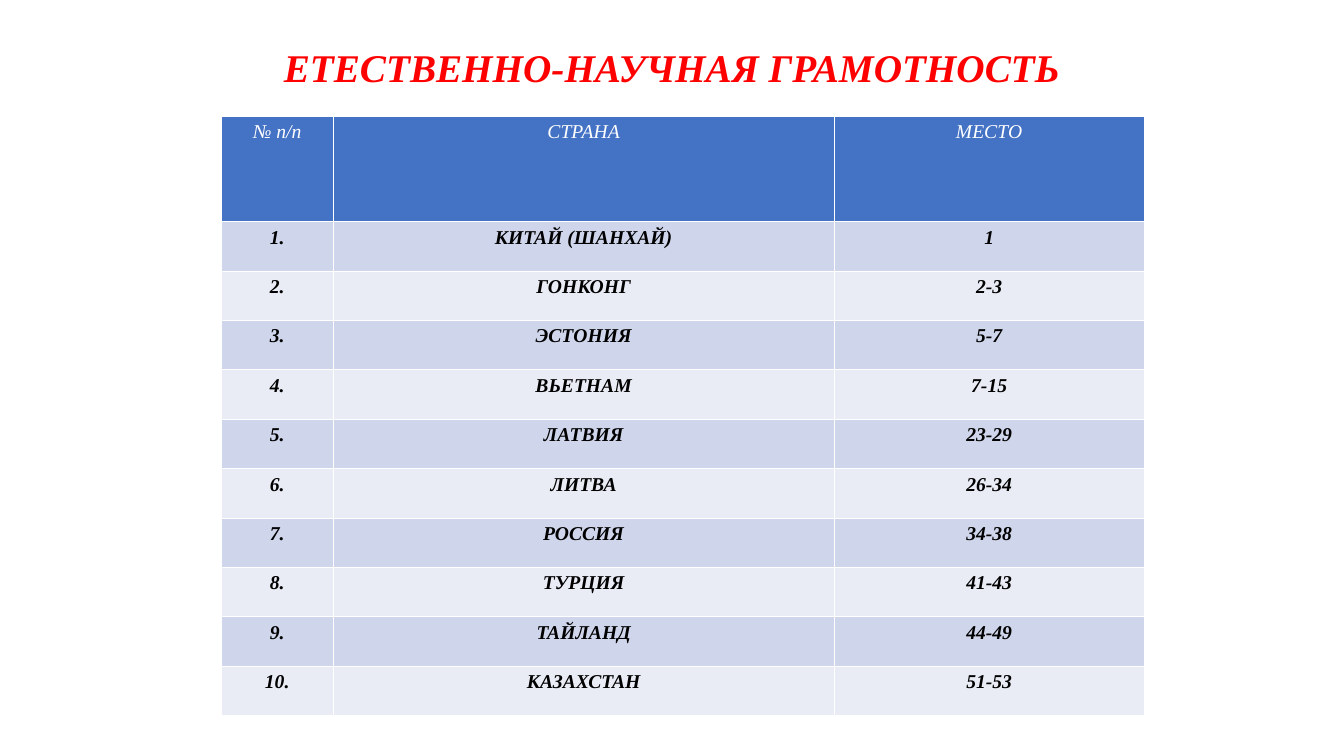
import pptx
import pptx.dml.color
import pptx.enum.text
import pptx.oxml
import pptx.oxml.ns
import pptx.util

RGBColor = pptx.dml.color.RGBColor
RED = RGBColor(0xFF, 0x00, 0x00)
WHITE = RGBColor(0xFF, 0xFF, 0xFF)
BLACK = RGBColor(0x00, 0x00, 0x00)
BLUE = RGBColor(0x44, 0x72, 0xC4)
BANDS = (RGBColor(0xE9, 0xEB, 0xF5), RGBColor(0xCF, 0xD5, 0xEA))

PX_PER_INCH = 200
HEADER = ("№ п/п", "СТРАНА", "МЕСТО")
RANKING = (
    ("КИТАЙ (ШАНХАЙ)", "1"),
    ("ГОНКОНГ", "2-3"),
    ("ЭСТОНИЯ", "5-7"),
    ("ВЬЕТНАМ", "7-15"),
    ("ЛАТВИЯ", "23-29"),
    ("ЛИТВА", "26-34"),
    ("РОССИЯ", "34-38"),
    ("ТУРЦИЯ", "41-43"),
    ("ТАЙЛАНД", "44-49"),
    ("КАЗАХСТАН", "51-53"),
)


def px(n):
    return pptx.util.Emu(n * 914400 // PX_PER_INCH)


class SlideBuilder:
    font_name = "Times New Roman"
    title_size = 42
    cell_size = 21

    def __init__(self, slide):
        self.slide = slide

    def format_text(self, tf, size, color, bold):
        p = tf.paragraphs[0]
        p.alignment = pptx.enum.text.PP_ALIGN.CENTER
        p.font.name = self.font_name
        p.font.size = pptx.util.Pt(size)
        p.font.bold = bold
        p.font.italic = True
        p.font.color.rgb = color

    def title(self, text, left, top, width, height):
        sp = self.slide.shapes.title
        sp.left, sp.top, sp.width, sp.height = map(px, (left, top, width, height))
        tf = sp.text_frame
        tf.text = text
        tf.word_wrap = True
        tf.auto_size = pptx.enum.text.MSO_AUTO_SIZE.NONE
        tf.vertical_anchor = pptx.enum.text.MSO_ANCHOR.MIDDLE
        self.format_text(tf, self.title_size, RED, True)

    def borders(self, cell):
        tcPr = cell._tc.get_or_add_tcPr()
        for side in "LRTB":
            tcPr.append(pptx.oxml.parse_xml(
                f'<a:ln{side} {pptx.oxml.ns.nsdecls("a")} w="12700"><a:solidFill>'
                f'<a:srgbClr val="{WHITE}"/></a:solidFill></a:ln{side}>'))

    def cell(self, cell, text, fill, color, bold):
        self.borders(cell)
        cell.fill.solid()
        cell.fill.fore_color.rgb = fill
        cell.margin_left = cell.margin_right = px(30)
        cell.margin_top = cell.margin_bottom = px(15)
        cell.text = text
        self.format_text(cell.text_frame, self.cell_size, color, bold)

    def table(self, rows, left, top, widths, header_height, row_height):
        height = header_height + row_height * (len(rows) - 1)
        table = self.slide.shapes.add_table(
            len(rows), len(widths), px(left), px(top), px(sum(widths)), px(height)).table
        for column, width in zip(table.columns, widths):
            column.width = px(width)
        for i, row in enumerate(rows):
            table.rows[i].height = px(row_height if i else header_height)
            style = (BANDS[i % 2], BLACK, True) if i else (BLUE, WHITE, False)
            for j, text in enumerate(row):
                self.cell(table.cell(i, j), text, *style)


def main():
    prs = pptx.Presentation()
    prs.slide_width, prs.slide_height = px(4000), px(2250)
    s = SlideBuilder(prs.slides.add_slide(prs.slide_layouts[5]))

    # Heading
    s.title("ЕТЕСТВЕННО-НАУЧНАЯ ГРАМОТНОСТЬ", 658, 118, 2684, 162)

    # Country ranking, numbered from one
    rows = [HEADER] + [(f"{n}.", *entry) for n, entry in enumerate(RANKING, 1)]
    s.table(rows, 658, 346, (334, 1490, 924), 314, 147)

    prs.save("out.pptx")


if __name__ == "__main__":
    main()
